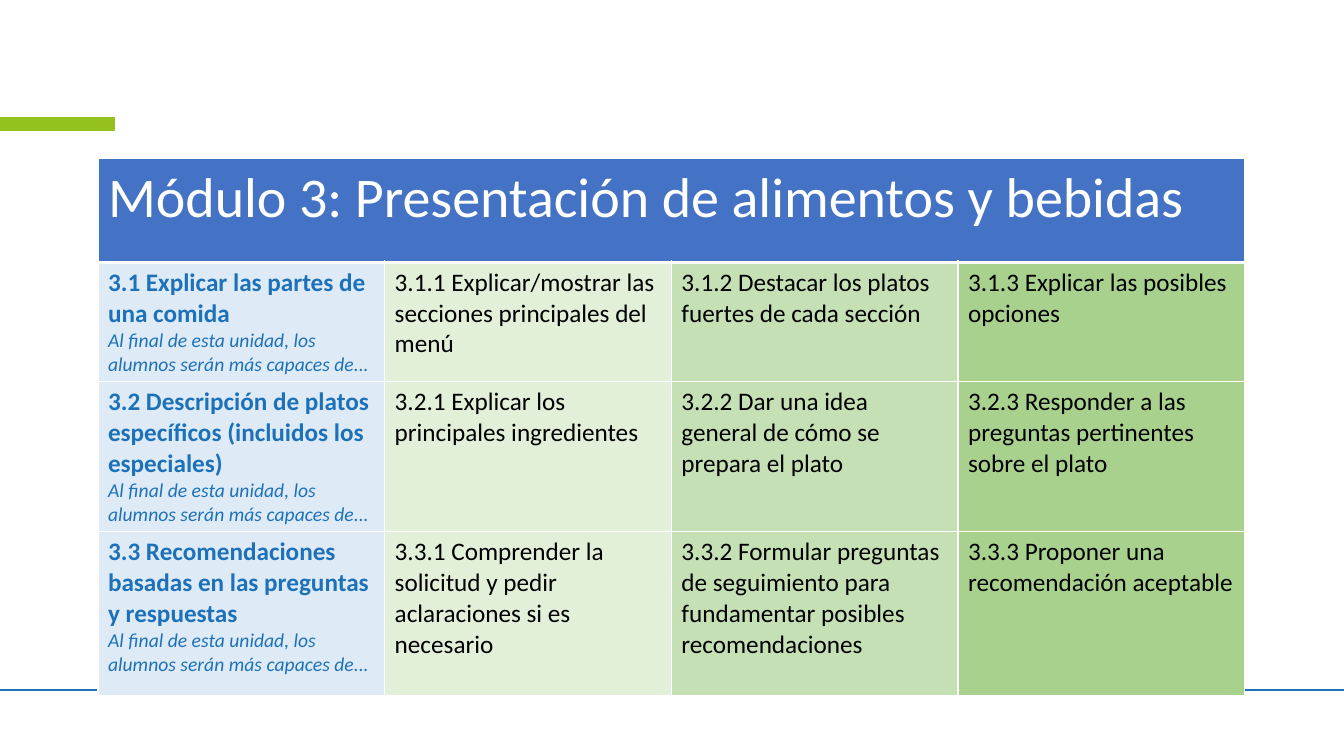
import pptx
import pptx.dml.color
import pptx.enum.shapes
import pptx.oxml
import pptx.oxml.ns
import pptx.util

Pt = pptx.util.Pt
RGB = pptx.dml.color.RGBColor

WHITE = RGB(0xFF, 0xFF, 0xFF)
BLACK = RGB(0, 0, 0)
BLUE = RGB(0x1D, 0x71, 0xB8)
LIME = RGB(0x95, 0xC1, 0x1F)
HEAD = RGB(0x44, 0x72, 0xC4)
FILLS = [RGB(0xDE, 0xEB, 0xF7), RGB(0xE2, 0xF0, 0xD9),
         RGB(0xC5, 0xE0, 0xB4), RGB(0xA9, 0xD1, 0x8E)]

TITLE = {"size": Pt(40), "color": WHITE, "bold": False}
UNIT = {"size": Pt(18), "color": BLUE, "bold": True}
GOAL = {"size": Pt(14), "color": BLUE, "bold": False, "italic": True}
SKILL = {"size": Pt(18), "color": BLACK, "bold": False}

HEADING = "Módulo 3: Presentación de alimentos y bebidas"
AIM = "Al final de esta unidad, los alumnos serán más capaces de..."
UNITS = [
    ["3.1 Explicar las partes de una comida",
     "3.1.1 Explicar/mostrar las secciones principales del menú",
     "3.1.2 Destacar los platos fuertes de cada sección",
     "3.1.3 Explicar las posibles opciones"],
    ["3.2 Descripción de platos específicos (incluidos los especiales)",
     "3.2.1 Explicar los principales ingredientes",
     "3.2.2 Dar una idea general de cómo se prepara el plato",
     "3.2.3 Responder a las preguntas pertinentes sobre el plato"],
    ["3.3 Recomendaciones basadas en las preguntas y respuestas",
     "3.3.1 Comprender la solicitud y pedir aclaraciones si es necesario",
     "3.3.2 Formular preguntas de seguimiento para fundamentar posibles "
     "recomendaciones",
     "3.3.3 Proponer una recomendación aceptable"],
]
HEIGHTS = [74, 85, 107, 117]
WIDTH = 204.8


def add_rule(slide, y):
    rule = slide.shapes.add_connector(
        pptx.enum.shapes.MSO_CONNECTOR.STRAIGHT, Pt(0), Pt(y), Pt(960), Pt(y))
    rule.line.color.rgb = BLUE
    rule.line.width = Pt(1)
    props = rule._element.spPr
    props.append(props.makeelement(pptx.oxml.ns.qn("a:effectLst"), {}))


def add_bar(slide, left, top, width, height):
    bar = slide.shapes.add_shape(
        pptx.enum.shapes.MSO_SHAPE.RECTANGLE,
        Pt(left), Pt(top), Pt(width), Pt(height))
    bar.shadow.inherit = False
    bar.fill.solid()
    bar.fill.fore_color.rgb = LIME
    bar.line.color.rgb = LIME
    bar.line.width = Pt(1)


def set_edges(cell, top, bottom):
    """Draw white cell borders; top and bottom are widths in points."""
    props = cell._tc.get_or_add_tcPr()
    for side, width in {"L": 1, "R": 1, "T": top, "B": bottom}.items():
        props.append(pptx.oxml.parse_xml(
            f'<a:ln{side} {pptx.oxml.ns.nsdecls("a")} w="{Pt(width)}">'
            f'<a:solidFill><a:srgbClr val="{WHITE}"/></a:solidFill>'
            f'</a:ln{side}>'))


def write(cell, parts):
    """Fill a cell with one paragraph per (text, format) pair."""
    frame = cell.text_frame
    for i, (text, style) in enumerate(parts):
        para = frame.add_paragraph() if i else frame.paragraphs[0]
        run = para.add_run()
        run.text = text
        run.font.name = "Calibri"
        for name, value in style.items():
            if name == "color":
                run.font.color.rgb = value
            else:
                setattr(run.font, name, value)


def add_grid(slide, left, top):
    rows, cols = len(HEIGHTS), len(FILLS)
    grid = slide.shapes.add_table(
        rows, cols, Pt(left), Pt(top),
        Pt(WIDTH * cols), Pt(sum(HEIGHTS))).table
    grid.first_row = False
    grid.horz_banding = False
    for col in grid.columns:
        col.width = Pt(WIDTH)
    for r, height in enumerate(HEIGHTS):
        grid.rows[r].height = Pt(height)
        for c, fill in enumerate(FILLS):
            cell = grid.cell(r, c)
            set_edges(cell, 3 if r == 1 else 1, 3 if r == 0 else 1)
            cell.fill.solid()
            cell.fill.fore_color.rgb = fill if r else HEAD
    grid.cell(0, 0).merge(grid.cell(0, cols - 1))
    write(grid.cell(0, 0), [(HEADING, TITLE)])
    for r, (unit, *skills) in enumerate(UNITS, 1):
        write(grid.cell(r, 0), [(unit, UNIT), (AIM, GOAL)])
        for c, skill in enumerate(skills, 1):
            write(grid.cell(r, c), [(skill, SKILL)])


def main():
    deck = pptx.Presentation()
    deck.slide_width = Pt(960)
    deck.slide_height = Pt(540)
    slide = deck.slides.add_slide(deck.slide_layouts[6])
    add_rule(slide, 493)
    add_bar(slide, 0, 84, 81.5, 9)
    add_grid(slide, 70, 113.4)
    deck.save("out.pptx")


if __name__ == "__main__":
    main()
